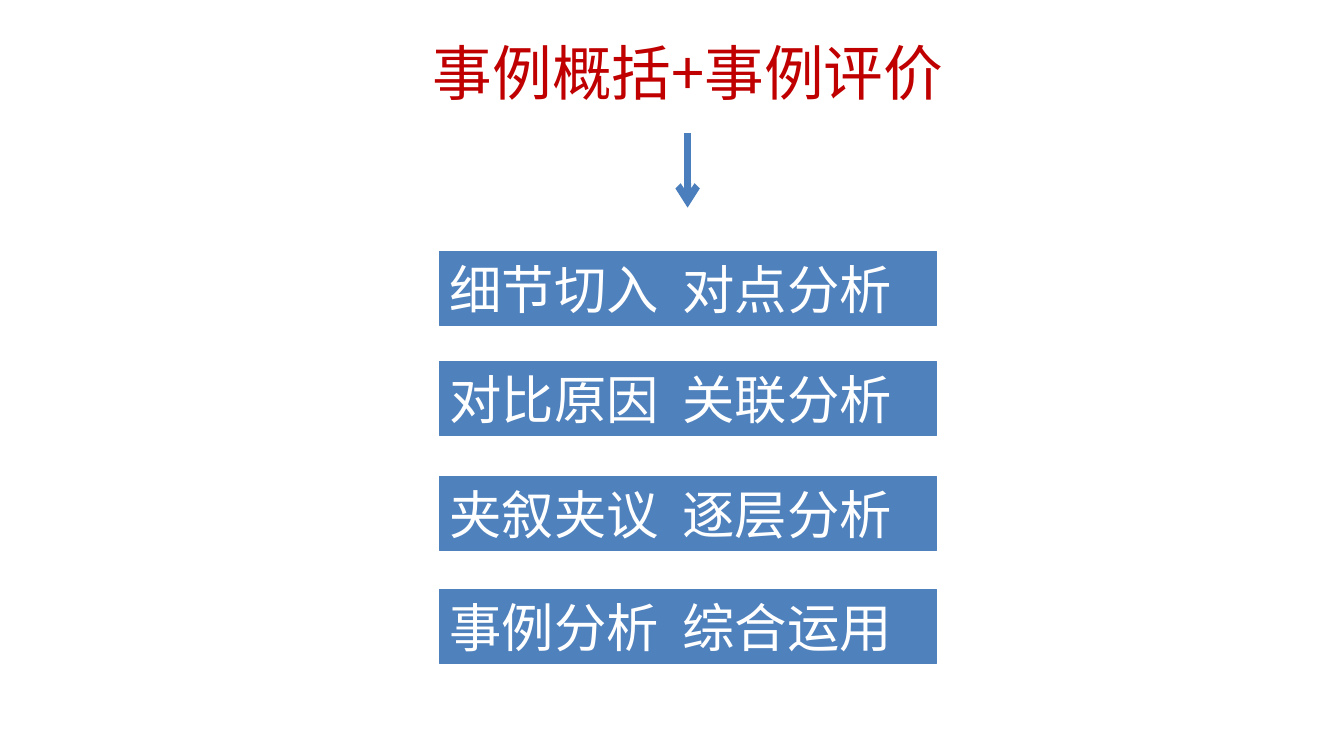
from dataclasses import dataclass

from lxml.etree import SubElement
from pptx import Presentation
from pptx.dml.color import RGBColor
from pptx.enum.shapes import MSO_CONNECTOR as Connector, MSO_SHAPE as Shape
from pptx.enum.text import MSO_ANCHOR as Anchor, MSO_AUTO_SIZE as AutoSize, PP_ALIGN as Align
from pptx.oxml.ns import qn
from pptx.util import Emu, Pt

EMU_PER_PX = 9144  # 100 px to the inch
FONT = "Noto Sans CJK SC"
COLORS = {"title": "C00000", "bar": "4F81BD", "bar_text": "FFFFFF", "arrow": "4B7EBC"}
FRAME_FORMAT = {
    "word_wrap": False,
    "auto_size": AutoSize.NONE,
    "vertical_anchor": Anchor.MIDDLE,
}
BAR_LEFT, BAR_WIDTH, BAR_HEIGHT = 436, 493, 73
SECOND_WORD_TAB = 231


@dataclass(frozen=True)
class Bar:
    top: int
    method: str
    analysis: str


BARS = [
    Bar(250, "细节切入", "对点分析"),
    Bar(359, "对比原因", "关联分析"),
    Bar(473, "夹叙夹议", "逐层分析"),
    Bar(585, "事例分析", "综合运用"),
]


def px(length: int) -> Emu:
    return Emu(length * EMU_PER_PX)


def color(name: str) -> RGBColor:
    return RGBColor.from_string(COLORS[name])


def write(box, text: str, size: float, color_name: str, align: Align):
    """Fill a shape with one formatted paragraph and return that paragraph."""
    frame = box.text_frame
    for name, value in FRAME_FORMAT.items():
        setattr(frame, name, value)
    para = frame.paragraphs[0]
    para.alignment = align
    span = para.add_run()
    span.text = text
    for name, value in {"size": Pt(size), "name": FONT, "bold": False}.items():
        setattr(span.font, name, value)
    span.font.color.rgb = color(color_name)
    SubElement(span._r.get_or_add_rPr(), qn("a:ea"), typeface=FONT)
    return para


def add_title(page) -> None:
    title = page.shapes.title
    place = {"left": 394, "top": 30, "width": 577, "height": 82}
    for name, value in place.items():
        setattr(title, name, px(value))
    write(title, "事例概括+事例评价", 42.6, "title", Align.CENTER)


def add_bar(page, bar: Bar) -> None:
    box = page.shapes.add_shape(
        Shape.RECTANGLE, px(BAR_LEFT), px(bar.top), px(BAR_WIDTH), px(BAR_HEIGHT)
    )
    box.shadow.inherit = False
    box.fill.solid()
    box.fill.fore_color.rgb = color("bar")
    box.line.color.rgb = color("bar")
    box.line.width = Pt(0.75)
    para = write(box, f"{bar.method}\t{bar.analysis}", 37.4, "bar_text", Align.LEFT)
    tabs = SubElement(para._p.get_or_add_pPr(), qn("a:tabLst"))
    SubElement(tabs, qn("a:tab"), pos=str(px(SECOND_WORD_TAB)), algn="l")


def add_down_arrow(page, x: int, top: int, bottom: int) -> None:
    arrow = page.shapes.add_connector(
        Connector.STRAIGHT, px(x), px(top), px(x), px(bottom)
    )
    arrow.line.color.rgb = color("arrow")
    arrow.line.width = Pt(5)
    SubElement(arrow.line._get_or_add_ln(), qn("a:tailEnd"), type="arrow")
    SubElement(arrow._element.spPr, qn("a:effectLst"))


def main() -> None:
    deck = Presentation()
    deck.slide_width, deck.slide_height = px(1333), px(750)
    page = deck.slides.add_slide(deck.slide_layouts.get_by_name("Title Only"))
    add_title(page)
    add_down_arrow(page, 682, 132, 206)
    for bar in BARS:
        add_bar(page, bar)
    deck.save("out.pptx")


if __name__ == "__main__":
    main()
